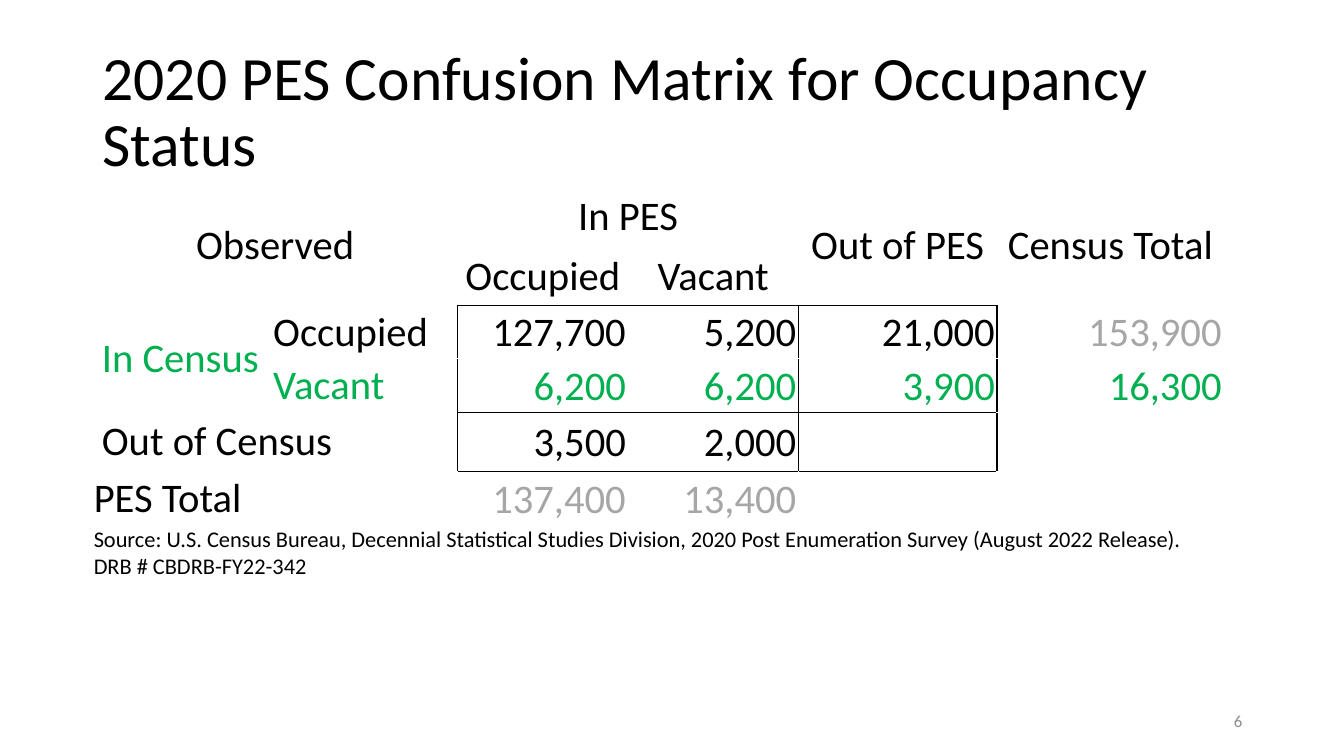
from lxml import etree
from pptx import Presentation
from pptx.dml.color import RGBColor
from pptx.enum.text import MSO_ANCHOR, PP_ALIGN
from pptx.oxml.ns import qn
from pptx.util import Emu, Pt

LEFT, CENTER, RIGHT = PP_ALIGN.LEFT, PP_ALIGN.CENTER, PP_ALIGN.RIGHT
MIDDLE = MSO_ANCHOR.MIDDLE

BLACK = RGBColor(0x00, 0x00, 0x00)
WHITE = RGBColor(0xFF, 0xFF, 0xFF)
GREEN = RGBColor(0x00, 0xB0, 0x50)
TOTAL_GRAY = RGBColor(0xA6, 0xA6, 0xA6)
NUMBER_GRAY = RGBColor(0x8C, 0x8C, 0x8C)

EMU_PER_PX = 9144  # 100 px to the inch
BODY_SIZE, SOURCE_SIZE = 29, 16

# Cell margins in px: left, top, right, bottom
WIDE, TIGHT, FLUSH = (9, 5, 9, 5), (2, 2, 2, 0), (1, 1, 1, 0)

COLUMN_WIDTHS = [178, 28, 156, 169, 169, 197, 225]
ROW_HEIGHTS = [59, 59, 53, 53, 59, 53, 36]

SOURCE = ("Source: U.S. Census Bureau, Decennial Statistical Studies Division, "
          "2020 Post Enumeration Survey (August 2022 Release).  DRB # CBDRB-FY22-342")

# Row, column, rows spanned, columns spanned, text, alignment, margins, colour, size
LABELS = [
    (0, 0, 2, 3, "Observed", CENTER, WIDE, BLACK, BODY_SIZE),
    (0, 3, 1, 2, "In PES", CENTER, WIDE, BLACK, BODY_SIZE),
    (0, 5, 2, 1, "Out of PES", CENTER, WIDE, BLACK, BODY_SIZE),
    (0, 6, 2, 1, "Census Total", CENTER, WIDE, BLACK, BODY_SIZE),
    (1, 3, 1, 1, "Occupied", CENTER, TIGHT, BLACK, BODY_SIZE),
    (1, 4, 1, 1, "Vacant", CENTER, TIGHT, BLACK, BODY_SIZE),
    (2, 0, 2, 1, "In Census", LEFT, WIDE, GREEN, BODY_SIZE),
    (2, 1, 1, 2, "Occupied", LEFT, FLUSH, BLACK, BODY_SIZE),
    (3, 1, 1, 2, "Vacant", LEFT, FLUSH, GREEN, BODY_SIZE),
    (4, 0, 1, 3, "Out of Census", LEFT, WIDE, BLACK, BODY_SIZE),
    (5, 0, 1, 2, "PES Total", LEFT, FLUSH, BLACK, BODY_SIZE),
    (6, 0, 1, 7, SOURCE, LEFT, FLUSH, BLACK, SOURCE_SIZE),
]

FIRST_COUNT_ROW, FIRST_COUNT_COLUMN = 2, 3
COUNTS = [
    ["127,700", "5,200", "21,000", "153,900"],
    ["6,200", "6,200", "3,900", "16,300"],
    ["3,500", "2,000"],
    ["137,400", "13,400"],
]

# Black grid lines, numbered from the table's top and left edges
RULED_ROW_EDGES, RULED_COLUMN_EDGES = (2, 4, 5), (3, 5, 6)
RULED_ROWS, RULED_COLUMNS = range(2, 5), range(3, 6)


def px(length):
    return Emu(length * EMU_PER_PX)


def count_color(row, column):
    if row == 3:
        return GREEN
    return TOTAL_GRAY if row == 5 or column == 6 else BLACK


class SlideWriter:
    def __init__(self, page, font_name):
        self.page = page
        self.font_name = font_name

    def style(self, para, size, color, align):
        para.alignment = align
        para.font.name = self.font_name
        para.font.size = Pt(size)
        para.font.color.rgb = color

    def text(self, left, top, width, height, words, size, color, align=LEFT, spacing=1.0):
        box = self.page.shapes.add_textbox(px(left), px(top), px(width), px(height))
        frame = box.text_frame
        frame.word_wrap = True
        frame.vertical_anchor = MIDDLE
        para = frame.paragraphs[0]
        para.text = words
        para.line_spacing = spacing
        self.style(para, size, color, align)

    def table(self, left, top, widths, heights):
        """Add an unfilled table without banding or header style."""
        shape = self.page.shapes.add_table(len(heights), len(widths), px(left), px(top),
                                           px(sum(widths)), px(sum(heights)))
        table = shape.table
        table.first_row = table.horz_banding = False
        for column, width in zip(table.columns, widths):
            column.width = px(width)
        for row, height in zip(table.rows, heights):
            row.height = px(height)
        return table

    def cell(self, cell, words, align, margins, color, size=BODY_SIZE):
        left, top, right, bottom = margins
        cell.margin_left, cell.margin_top = px(left), px(top)
        cell.margin_right, cell.margin_bottom = px(right), px(bottom)
        cell.vertical_anchor = MIDDLE
        para = cell.text_frame.paragraphs[0]
        para.text = words
        self.style(para, size, color, align)

    def borders(self, cell, row, column):
        """Rule the cell's sides black on the matrix grid and white elsewhere."""
        end_row, end_column = row + cell.span_height, column + cell.span_width
        in_rows, in_columns = row in RULED_ROWS, column in RULED_COLUMNS
        sides = {
            "a:lnL": in_rows and column in RULED_COLUMN_EDGES,
            "a:lnR": in_rows and end_column in RULED_COLUMN_EDGES,
            "a:lnT": in_columns and row in RULED_ROW_EDGES,
            "a:lnB": in_columns and end_row in RULED_ROW_EDGES,
        }
        properties = cell._tc.get_or_add_tcPr()
        for tag, ruled in sides.items():
            line = etree.SubElement(properties, qn(tag), w=str(Pt(1)))
            fill = etree.SubElement(line, qn("a:solidFill"))
            etree.SubElement(fill, qn("a:srgbClr"), val=str(BLACK if ruled else WHITE))
        cell.fill.background()


def main():
    deck = Presentation()
    deck.slide_width, deck.slide_height = px(1333), px(750)
    page = deck.slides.add_slide(deck.slide_layouts[6])
    writer = SlideWriter(page, "Calibri")

    writer.text(92, 40, 1150, 145, "2020 PES Confusion Matrix for Occupancy Status",
                44, BLACK, spacing=0.9)
    writer.text(942, 695, 300, 40, "6", 12, NUMBER_GRAY, RIGHT)

    matrix = writer.table(92, 185, COLUMN_WIDTHS, ROW_HEIGHTS)
    for row, column, rows, columns, words, align, margins, color, size in LABELS:
        cell = matrix.cell(row, column)
        if rows * columns > 1:
            cell.merge(matrix.cell(row + rows - 1, column + columns - 1))
        writer.cell(cell, words, align, margins, color, size)
    for row, counts in enumerate(COUNTS, FIRST_COUNT_ROW):
        for column, count in enumerate(counts, FIRST_COUNT_COLUMN):
            writer.cell(matrix.cell(row, column), count, RIGHT, TIGHT,
                        count_color(row, column))
    for row in range(len(ROW_HEIGHTS)):
        for column in range(len(COLUMN_WIDTHS)):
            writer.borders(matrix.cell(row, column), row, column)

    deck.save("out.pptx")


if __name__ == "__main__":
    main()
